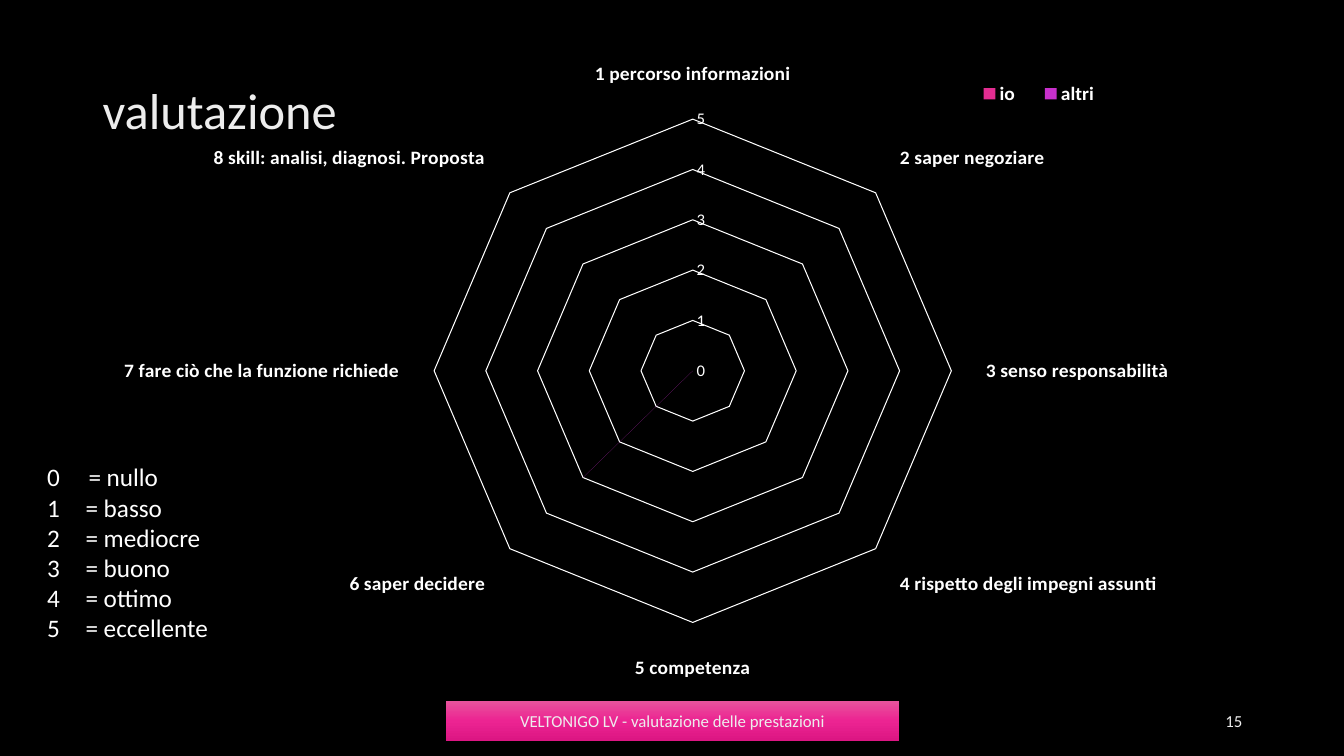
import pptx
import pptx.chart.data
import pptx.dml.color
import pptx.enum.chart
import pptx.enum.shapes
import pptx.enum.text
import pptx.util
from lxml import etree
from pptx.oxml.ns import qn
from pptx.util import Inches

COLORS = {"background": "000000", "white": "FFFFFF", "soft": "EDEDED", "io": "E32D91", "altri": "C830CC"}
FONT = "Calibri"
TITLE = "valutazione"
FOOTER = "VELTONIGO LV - valutazione delle prestazioni"
FOOTER_STOPS = [(0, "E8559D"), (50, "EC2492"), (100, "DC1683")]
PAGE = "15"
GRADES = ["= basso", "= mediocre", "= buono", "= ottimo", "= eccellente"]
SKILLS = [
    "1 percorso informazioni",
    "2 saper negoziare",
    "3 senso responsabilità",
    "4 rispetto degli impegni assunti",
    "5 competenza",
    "6 saper decidere",
    "7 fare ciò che la funzione richiede",
    "8 skill: analisi, diagnosi. Proposta",
]
SCORES = {"io": [0, 0, 0, 0, 0, 0, 0, 0], "altri": [0, 0, 0, 0, 0, 3, 0, 0]}
PLOT_AREA = {"x": 0.271, "y": 0.107, "w": 0.461, "h": 0.832}
LEGEND_AREA = {"x": 0.74, "y": 0.04, "w": 0.14, "h": 0.05}
ALIGN = pptx.enum.text.PP_ALIGN
ANCHOR = pptx.enum.text.MSO_ANCHOR


def rgb(name):
    return pptx.dml.color.RGBColor.from_string(COLORS[name])


def style_font(font, size, color="white", bold=False):
    font.name = FONT
    font.size = pptx.util.Pt(size)
    font.bold = bold
    font.color.rgb = rgb(color)


def write(frame, text, size=12, color="soft", align=ALIGN.LEFT, anchor=ANCHOR.MIDDLE,
          spacing=None, indent=None, numbered=False, append=False):
    frame.word_wrap = True
    frame.vertical_anchor = anchor
    paragraph = frame.add_paragraph() if append else frame.paragraphs[0]
    paragraph.alignment = align
    if spacing:
        paragraph.line_spacing = spacing
    properties = paragraph._p.get_or_add_pPr()
    if indent:
        properties.set("marL", str(Inches(indent)))
        properties.set("indent", str(-Inches(indent)))
    if numbered:
        etree.SubElement(properties, qn("a:buFont"), typeface="+mj-lt")
        etree.SubElement(properties, qn("a:buAutoNum"), type="arabicPlain")
    run = paragraph.add_run()
    run.text = text
    style_font(run.font, size, color)


def add_text_box(slide, left, top, width, height):
    return slide.shapes.add_textbox(Inches(left), Inches(top), Inches(width), Inches(height)).text_frame


def place(element, area, inner=False):
    for old in element.findall(qn("c:layout")):
        element.remove(old)
    layout = etree.Element(qn("c:layout"))
    manual = etree.SubElement(layout, qn("c:manualLayout"))
    if inner:
        etree.SubElement(manual, qn("c:layoutTarget"), val="inner")
    for key in "xy":
        etree.SubElement(manual, qn(f"c:{key}Mode"), val="edge")
    for key, value in area.items():
        etree.SubElement(manual, qn(f"c:{key}"), val=str(value))
    position = element.find(qn("c:legendPos"))
    if position is None:
        element.insert(0, layout)
    else:
        position.addnext(layout)


def add_radar(slide):
    data = pptx.chart.data.CategoryChartData()
    data.categories = SKILLS
    for name, values in SCORES.items():
        data.add_series(name, values)
    chart = slide.shapes.add_chart(
        pptx.enum.chart.XL_CHART_TYPE.RADAR_FILLED,
        Inches(1.23), Inches(0.54), Inches(11.19), Inches(6.2), data).chart
    style_font(chart.font, 10)
    chart.has_title = False
    chart.has_legend = True
    chart.legend.position = pptx.enum.chart.XL_LEGEND_POSITION.TOP
    chart.legend.include_in_layout = False
    style_font(chart.legend.font, 14, bold=True)
    place(chart.legend._element, LEGEND_AREA)
    place(chart._chartSpace.chart.plotArea, PLOT_AREA, inner=True)

    plot = chart.plots[0]
    plot.vary_by_categories = False
    for series in plot.series:
        series.format.fill.solid()
        series.format.fill.fore_color.rgb = rgb(series.name)
        series.format.line.fill.background()

    categories, values = chart.category_axis, chart.value_axis
    for axis, size, bold in ((categories, 14, True), (values, 12, False)):
        axis.major_tick_mark = axis.minor_tick_mark = pptx.enum.chart.XL_TICK_MARK.NONE
        style_font(axis.tick_labels.font, size, bold=bold)
    categories.has_major_gridlines = False
    values.has_major_gridlines = True
    for line in (categories.format.line, values.major_gridlines.format.line):
        line.width = pptx.util.Pt(0.75)
        line.color.rgb = rgb("white")
    values.format.line.fill.background()
    values.minimum_scale, values.maximum_scale, values.major_unit = 0, 5, 1
    values.tick_labels.number_format = "General"
    values.tick_labels.number_format_is_linked = False


def add_footer(slide):
    shape = slide.shapes.add_shape(
        pptx.enum.shapes.MSO_SHAPE.RECTANGLE, Inches(4.42), Inches(6.95), Inches(4.5), Inches(0.4))
    shape.shadow.inherit = False
    shape.line.fill.background()
    shape.fill.gradient()
    shape.fill.gradient_angle = 270
    stops = shape._element.spPr.find(qn("a:gradFill")).find(qn("a:gsLst"))
    for stop in list(stops):
        stops.remove(stop)
    for percent, color in FOOTER_STOPS:
        stop = etree.SubElement(stops, qn("a:gs"), pos=str(percent * 1000))
        etree.SubElement(stop, qn("a:srgbClr"), val=color)
    write(shape.text_frame, FOOTER, align=ALIGN.CENTER)


def main():
    """Build the evaluation slide with its radar chart."""
    presentation = pptx.Presentation()
    presentation.slide_width, presentation.slide_height = Inches(13.33), Inches(7.5)
    slide = presentation.slides.add_slide(presentation.slide_layouts[6])
    slide.background.fill.solid()
    slide.background.fill.fore_color.rgb = rgb("background")

    write(add_text_box(slide, 0.92, 0.4, 11.5, 1.45), TITLE, size=36, spacing=0.9)
    add_radar(slide)
    add_footer(slide)
    write(add_text_box(slide, 9.42, 6.95, 3, 0.4), PAGE, align=ALIGN.RIGHT)

    scale = add_text_box(slide, 0.37, 4.53, 2.84, 1.92)
    write(scale, "0\t= nullo", size=18, color="white", anchor=ANCHOR.TOP, indent=0.41)
    for grade in GRADES:
        write(scale, grade, size=18, color="white", anchor=ANCHOR.TOP,
              indent=0.38, numbered=True, append=True)
    presentation.save("out.pptx")


if __name__ == "__main__":
    main()
